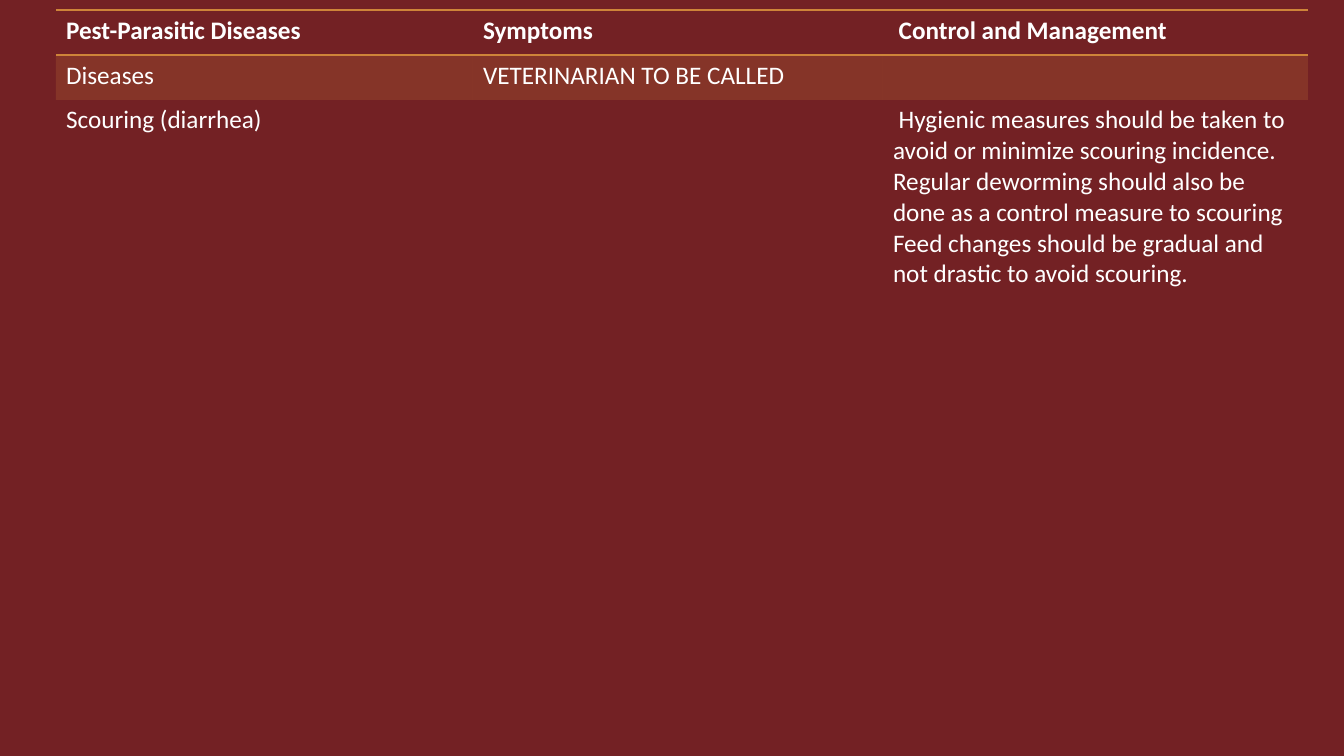
from lxml import etree
from pptx import Presentation
from pptx.dml.color import RGBColor
from pptx.oxml.ns import qn
from pptx.util import Pt

EMU_PER_PX = 12192000 / 1344
PLAIN_TABLE_STYLE = "{2D5ABB26-0587-4C30-8999-92F81FD0307C}"

COLUMN_WIDTHS = [417, 410, 425]
ROW_HEIGHTS = [45, 45, 729]
DISEASE_ROWS = [
    [["Pest-Parasitic Diseases"], ["Symptoms"], [" Control and Management"]],
    [["Diseases"], ["VETERINARIAN TO BE CALLED"], []],
    [["Scouring (diarrhea)"], [], [
        " Hygienic measures should be taken to avoid or minimize scouring incidence.",
        "Regular deworming should also be done as a control measure to scouring",
        "Feed changes should be gradual and not drastic to avoid scouring.",
    ]],
]
# Border tags and band tint for each row
ROW_BORDERS = [["a:lnT", "a:lnB"], [], ["a:lnB"]]
ROW_TINTED = [False, True, False]


def px(length):
    return round(length * EMU_PER_PX)


def color(hex_value):
    return RGBColor.from_string(hex_value)


class DiseaseSlide:
    font_name = "Calibri"
    font_size = 18
    text_color = "FFFFFF"
    accent = "CE8439"
    tint_percent = 20

    def __init__(self, presentation, background):
        self.slide = presentation.slides.add_slide(presentation.slide_layouts[6])
        fill = self.slide.background.fill
        fill.solid()
        fill.fore_color.rgb = color(background)

    def table(self, left, top, widths, heights, rows):
        frame = self.slide.shapes.add_table(
            len(heights), len(widths), px(left), px(top),
            px(sum(widths)), px(sum(heights)))
        table = frame.table
        table.horz_banding = False
        style_id = frame._element.find(".//" + qn("a:tableStyleId"))
        style_id.text = PLAIN_TABLE_STYLE
        for column, width in zip(table.columns, widths):
            column.width = px(width)
        for row, height in zip(table.rows, heights):
            row.height = px(height)
        for r, row in enumerate(rows):
            for c, paragraphs in enumerate(row):
                cell = table.cell(r, c)
                self.borders(cell, ROW_BORDERS[r])
                self.cell_fill(cell, ROW_TINTED[r])
                self.cell_text(cell, paragraphs, bold=r == 0)

    def borders(self, cell, edges):
        properties = cell._tc.get_or_add_tcPr()
        for edge in edges:
            line = etree.SubElement(properties, qn(edge), w=str(Pt(1)))
            solid = etree.SubElement(line, qn("a:solidFill"))
            etree.SubElement(solid, qn("a:srgbClr"), val=self.accent)

    def cell_fill(self, cell, tinted):
        if not tinted:
            cell.fill.background()
            return
        cell.fill.solid()
        cell.fill.fore_color.rgb = color(self.accent)
        tint = cell._tc.tcPr.find(".//" + qn("a:srgbClr"))
        etree.SubElement(tint, qn("a:alpha"), val=str(self.tint_percent * 1000))

    def cell_text(self, cell, paragraphs, bold):
        frame = cell.text_frame
        for index, text in enumerate(paragraphs):
            paragraph = frame.add_paragraph() if index else frame.paragraphs[0]
            run = paragraph.add_run()
            run.text = text
            run.font.name = self.font_name
            run.font.size = Pt(self.font_size)
            run.font.bold = bold
            run.font.color.rgb = color(self.text_color)


def main():
    presentation = Presentation()
    presentation.slide_width = px(1344)
    presentation.slide_height = px(756)
    slide = DiseaseSlide(presentation, background="732124")
    slide.table(56, 10, COLUMN_WIDTHS, ROW_HEIGHTS, DISEASE_ROWS)
    presentation.save("out.pptx")


if __name__ == "__main__":
    main()
